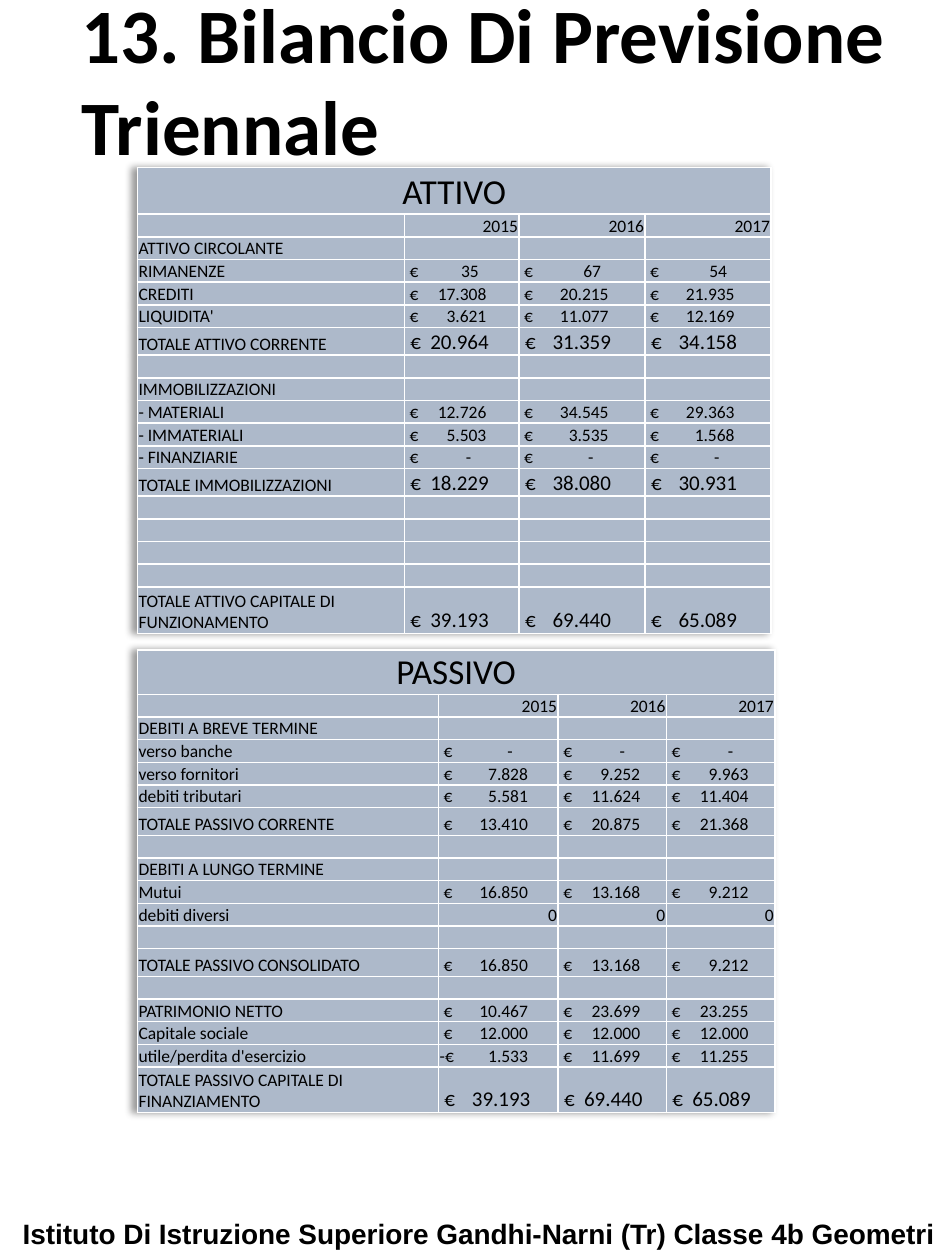
from dataclasses import dataclass

from lxml import etree
from pptx import Presentation
from pptx import util as u
from pptx.dml.color import RGBColor
from pptx.enum import text
from pptx.oxml.ns import qn

Inches, Pt = u.Inches, u.Pt
Align = text.PP_ALIGN


@dataclass(frozen=True)
class Theme:
    ink: RGBColor = RGBColor(0, 0, 0)
    fill: RGBColor = RGBColor(0xAD, 0xB9, 0xCA)
    edge: str = "FFFFFF"
    body: str = "Calibri"
    foot: str = "Arial"
    title: int = 44
    head: int = 20
    base: int = 10
    total: int = 12
    note: int = 16


@dataclass(frozen=True)
class Row:
    label: str = ""
    sums: tuple[str, ...] = ()
    high: float = 0.18
    size: int = 10
    plain: bool = False  # bare numbers, set flush right


@dataclass(frozen=True)
class Sheet:
    name: str
    top: float
    head: float
    cols: tuple[float, ...]
    stops: tuple[float, ...]  # where the amounts end in each column
    rows: tuple[Row, ...]


THEME = Theme()
LEFT = 1.09
YEARS = Row("", ("2015", "2016", "2017"), plain=True)
GAP = Row()

ASSETS = Sheet(
    "ATTIVO", 1.33, 0.37, (2.12, 0.91, 1, 1), (0.64, 0.7, 0.7),
    (
        YEARS,
        Row("ATTIVO CIRCOLANTE"),
        Row("RIMANENZE", ("35", "67", "54")),
        Row("CREDITI", ("17.308", "20.215", "21.935")),
        Row("LIQUIDITA'", ("3.621", "11.077", "12.169")),
        Row("TOTALE ATTIVO CORRENTE", ("20.964", "31.359", "34.158"), 0.22, THEME.total),
        GAP,
        Row("IMMOBILIZZAZIONI"),
        Row("- MATERIALI", ("12.726", "34.545", "29.363")),
        Row("- IMMATERIALI", ("5.503", "3.535", "1.568")),
        Row("- FINANZIARIE", ("-", "-", "-")),
        Row("TOTALE IMMOBILIZZAZIONI", ("18.229", "38.080", "30.931"), 0.22, THEME.total),
        GAP, GAP, GAP, GAP,
        Row("TOTALE ATTIVO CAPITALE DI FUNZIONAMENTO",
            ("39.193", "69.440", "65.089"), 0.37, THEME.total),
    ),
)

DEBTS = Sheet(
    "PASSIVO", 5.16, 0.34, (2.39, 0.95, 0.86, 0.86), (0.7, 0.64, 0.64),
    (
        YEARS,
        Row("DEBITI A BREVE TERMINE"),
        Row("verso banche", ("-", "-", "-")),
        Row("verso fornitori", ("7.828", "9.252", "9.963")),
        Row("debiti tributari", ("5.581", "11.624", "11.404")),
        Row("TOTALE PASSIVO CORRENTE", ("13.410", "20.875", "21.368"), 0.22),
        GAP,
        Row("DEBITI A LUNGO TERMINE"),
        Row("Mutui", ("16.850", "13.168", "9.212")),
        Row("debiti diversi", ("0", "0", "0"), plain=True),
        GAP,
        Row("TOTALE PASSIVO CONSOLIDATO", ("16.850", "13.168", "9.212"), 0.22),
        GAP,
        Row("PATRIMONIO NETTO", ("10.467", "23.699", "23.255")),
        Row("Capitale sociale", ("12.000", "12.000", "12.000")),
        Row("utile/perdita d'esercizio", ("-1.533", "11.699", "11.255")),
        Row("TOTALE PASSIVO CAPITALE DI FINANZIAMENTO",
            ("39.193", "69.440", "65.089"), 0.36, THEME.total),
    ),
)


def add_run(para, words: str, size: int, face: str, bold: bool = False) -> None:
    run = para.add_run()
    run.text = words
    run.font.size, run.font.name, run.font.bold = Pt(size), face, bold
    run.font.color.rgb = THEME.ink


def add_stop(para, pos: float) -> None:
    tabs = etree.SubElement(para._p.get_or_add_pPr(), qn("a:tabLst"))
    etree.SubElement(tabs, qn("a:tab"), pos=str(Inches(pos)), algn="r")


def style_cell(cell) -> None:
    cell.margin_left = cell.margin_right = cell.margin_top = Inches(0.01)
    cell.margin_bottom = 0
    cell.vertical_anchor = text.MSO_ANCHOR.BOTTOM
    props = cell._tc.get_or_add_tcPr()
    for side in ("lnL", "lnR", "lnT", "lnB"):
        line = etree.SubElement(props, qn(f"a:{side}"), w=str(Pt(1)))
        paint = etree.SubElement(line, qn("a:solidFill"))
        etree.SubElement(paint, qn("a:srgbClr"), val=THEME.edge)
    cell.fill.solid()
    cell.fill.fore_color.rgb = THEME.fill


def write_cell(cell, words: str, size: int, align=Align.LEFT) -> None:
    para = cell.text_frame.paragraphs[0]
    para.alignment = align
    if words:
        add_run(para, words, size, THEME.body)
    else:
        etree.SubElement(para._p, qn("a:endParaRPr"), sz=str(size * 100))


def write_sum(cell, value: str, stop: float, size: int) -> None:
    # Dashes and short amounts end a little before the full ones
    if value == "-":
        stop -= 0.12
    elif len(value) < 3:
        stop -= 0.06
    elif size == THEME.total:
        stop += 0.02
    add_stop(cell.text_frame.paragraphs[0], stop)
    loss = value.startswith("-") and len(value) > 1
    sign, digits = ("-€", value[1:]) if loss else (" €", value)
    write_cell(cell, f"{sign}\t{digits}", size)


def add_shade(table) -> None:
    props = table._tbl.tblPr
    effect = etree.Element(qn("a:effectLst"))
    shade = etree.SubElement(effect, qn("a:outerShdw"), blurRad="50800",
                             dist="38100", dir="10800000", rotWithShape="0")
    tint = etree.SubElement(shade, qn("a:srgbClr"), val="000000")
    etree.SubElement(tint, qn("a:alpha"), val="40000")
    props.insert(0, effect)


def draw_sheet(slide, sheet: Sheet) -> None:
    highs = (sheet.head, *(row.high for row in sheet.rows))
    table = slide.shapes.add_table(
        len(highs), len(sheet.cols), Inches(LEFT), Inches(sheet.top),
        Inches(sum(sheet.cols)), Inches(sum(highs))).table
    table.first_row = table.horz_banding = False
    add_shade(table)
    for col, wide in zip(table.columns, sheet.cols):
        col.width = Inches(wide)
    for line, high in zip(table.rows, highs):
        line.height = Inches(high)
    for cell in table.iter_cells():
        style_cell(cell)

    # Heading across all columns
    table.cell(0, 0).merge(table.cell(0, len(sheet.cols) - 1))
    write_cell(table.cell(0, 0), sheet.name, THEME.head, Align.CENTER)

    # Labels and amounts
    for r, row in enumerate(sheet.rows, 1):
        write_cell(table.cell(r, 0), row.label, THEME.base)
        sums = row.sums or ("",) * len(sheet.stops)
        for c, (value, stop) in enumerate(zip(sums, sheet.stops), 1):
            cell = table.cell(r, c)
            if row.plain or not value:
                write_cell(cell, value, row.size, Align.RIGHT)
            else:
                write_sum(cell, value, stop, row.size)


def draw_text(slide, box: tuple[float, ...], words: str, size: int,
              face: str, align=Align.LEFT) -> None:
    frame = slide.shapes.add_textbox(*map(Inches, box)).text_frame
    frame.word_wrap = True
    frame.auto_size = text.MSO_AUTO_SIZE.SHAPE_TO_FIT_TEXT
    para = frame.paragraphs[0]
    para.alignment = align
    add_run(para, words, size, face, bold=True)


def main() -> None:
    deck = Presentation()
    deck.slide_width, deck.slide_height = Inches(7.5), Inches(10)
    slide = deck.slides.add_slide(deck.slide_layouts[6])

    # Balance sheets
    for sheet in (ASSETS, DEBTS):
        draw_sheet(slide, sheet)

    # Footer and title
    draw_text(slide, (0, 9.61, 7.52, 0.37),
              "Istituto Di Istruzione Superiore Gandhi-Narni (Tr) Classe 4b Geometri",
              THEME.note, THEME.foot, Align.RIGHT)
    draw_text(slide, (0.55, -0.16, 7.55, 1.58),
              "13. Bilancio Di Previsione Triennale", THEME.title, THEME.body)
    deck.save("out.pptx")


if __name__ == "__main__":
    main()
